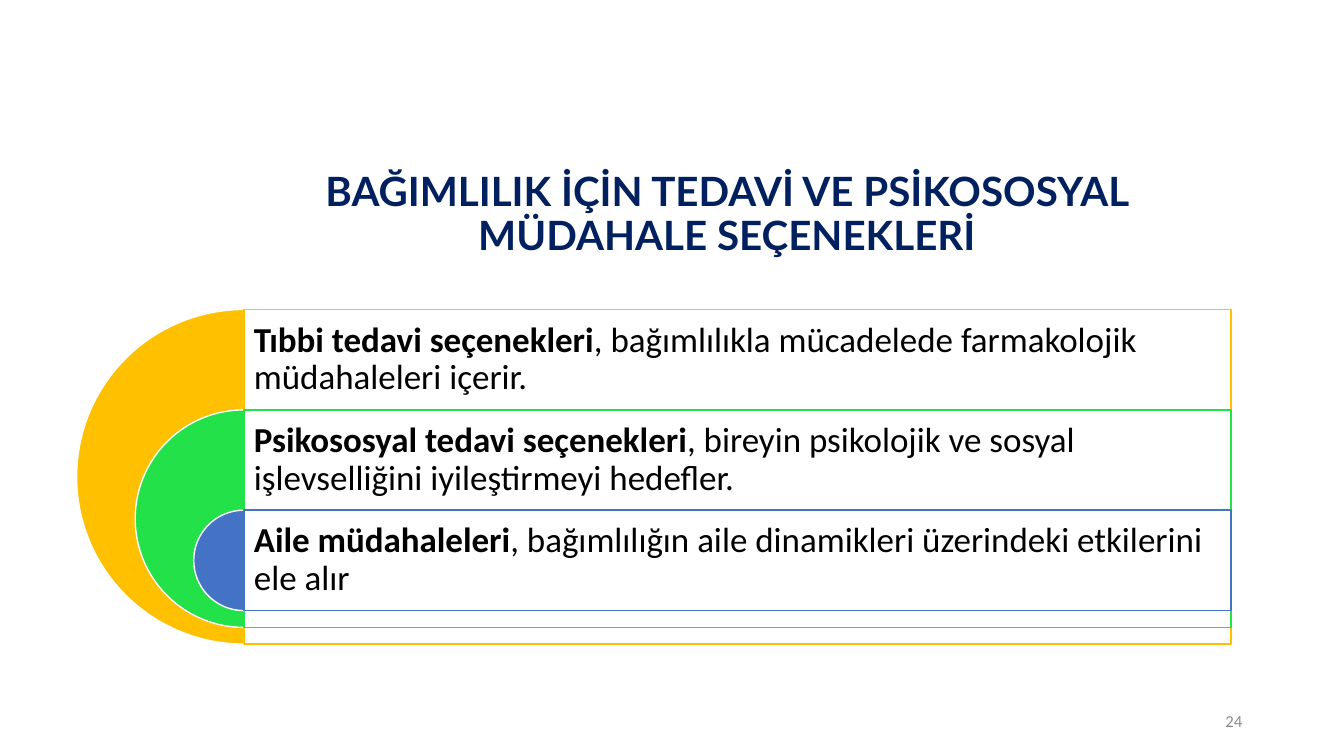
from lxml import etree
from pptx import Presentation
from pptx.dml.color import RGBColor
from pptx.enum.shapes import MSO_SHAPE as Shape
from pptx.enum.text import MSO_ANCHOR as Anchor, MSO_AUTO_SIZE as AutoSize, PP_ALIGN as Align
from pptx.oxml.ns import qn
from pptx.util import Inches, Pt

TITLE = "BAĞIMLILIK İÇİN TEDAVİ VE PSİKOSOSYAL MÜDAHALE SEÇENEKLERİ"
OPTIONS = [
    ("FFC000", "Tıbbi tedavi seçenekleri",
     ", bağımlılıkla mücadelede farmakolojik müdahaleleri içerir."),
    ("23E148", "Psikososyal tedavi seçenekleri",
     ", bireyin psikolojik ve sosyal işlevselliğini iyileştirmeyi hedefler."),
    ("4472C4", "Aile müdahaleleri",
     ", bağımlılığın aile dinamikleri üzerindeki etkilerini ele alır"),
]


def color(hex_value):
    return RGBColor.from_string(hex_value)


def add_run(paragraph, text, size, hex_value, font="Calibri", bold=False):
    run = paragraph.add_run()
    run.text = text
    run.font.name = font
    run.font.size = Pt(size)
    run.font.bold = bold
    run.font.color.rgb = color(hex_value)


def add_panel(shapes, kind, box, fill, line):
    panel = shapes.add_shape(kind, *map(Inches, box))
    panel.shadow.inherit = False
    panel.fill.solid()
    panel.fill.fore_color.rgb = color(fill)
    panel.line.color.rgb = color(line)
    panel.line.width = Pt(1)
    return panel


def set_opacity(panel, percent):
    fill = panel.fill._xPr.find(qn("a:solidFill"))
    etree.SubElement(fill[0], qn("a:alpha"), val=str(percent * 1000))


def add_title(slide, left, top, width, height):
    title = slide.shapes.title
    title.left, title.top = Inches(left), Inches(top)
    title.width, title.height = Inches(width), Inches(height)
    frame = title.text_frame
    frame.auto_size = AutoSize.NONE
    frame.word_wrap = True
    frame.vertical_anchor = Anchor.BOTTOM
    frame.margin_bottom = Inches(0.92)
    heading = frame.paragraphs[0]
    heading.alignment = Align.CENTER
    heading.line_spacing = 0.9
    add_run(heading, TITLE, 28.8, "002060", "Lato", True)


def add_option_text(shapes, box, name, description):
    frame = shapes.add_textbox(*map(Inches, box)).text_frame
    frame.word_wrap = True
    frame.vertical_anchor = Anchor.MIDDLE
    frame.margin_left = frame.margin_right = Inches(0.1)
    frame.margin_top = frame.margin_bottom = Inches(0.1)
    option = frame.paragraphs[0]
    option.line_spacing = 0.9
    option.space_after = Pt(8.75)
    add_run(option, name, 25, "000000", bold=True)
    add_run(option, description, 25, "000000")


def add_target_list(slide, left, top, width, height):
    """Nested half discs, each with a framed option to its right."""
    shapes = slide.shapes.add_group_shape().shapes
    row = height * 0.3
    shrink = height * 0.35
    center = left + height / 2
    text_width = width - height / 2
    for i, (accent, name, description) in enumerate(OPTIONS):
        diameter = height - i * shrink
        row_top = top + i * row
        half_disc = add_panel(
            shapes, Shape.PIE,
            (center - diameter / 2, row_top, diameter, diameter), accent, "FFFFFF")
        half_disc.adjustments[0] = 54
        half_disc.adjustments[1] = 162
        frame = add_panel(shapes, Shape.RECTANGLE,
                          (center, row_top, text_width, diameter), "FFFFFF", accent)
        set_opacity(frame, 90)
        add_option_text(shapes, (center, row_top, text_width, row), name, description)


def add_page_number(slide, left, top, width, height):
    box = slide.shapes.add_textbox(*map(Inches, (left, top, width, height)))
    frame = box.text_frame
    frame.word_wrap = True
    frame.vertical_anchor = Anchor.MIDDLE
    number = frame.paragraphs[0]
    number.alignment = Align.RIGHT
    add_run(number, "24", 12, "8C8C8C")


def main():
    deck = Presentation()
    deck.slide_width, deck.slide_height = Inches(13.33), Inches(7.5)
    slide = deck.slides.add_slide(deck.slide_layouts[5])
    add_title(slide, 2.21, 1.91, 10, 1.58)
    add_target_list(slide, 0.76, 3.07, 11.45, 3.32)
    add_page_number(slide, 9.42, 6.95, 3, 0.4)
    deck.save("out.pptx")


if __name__ == "__main__":
    main()
